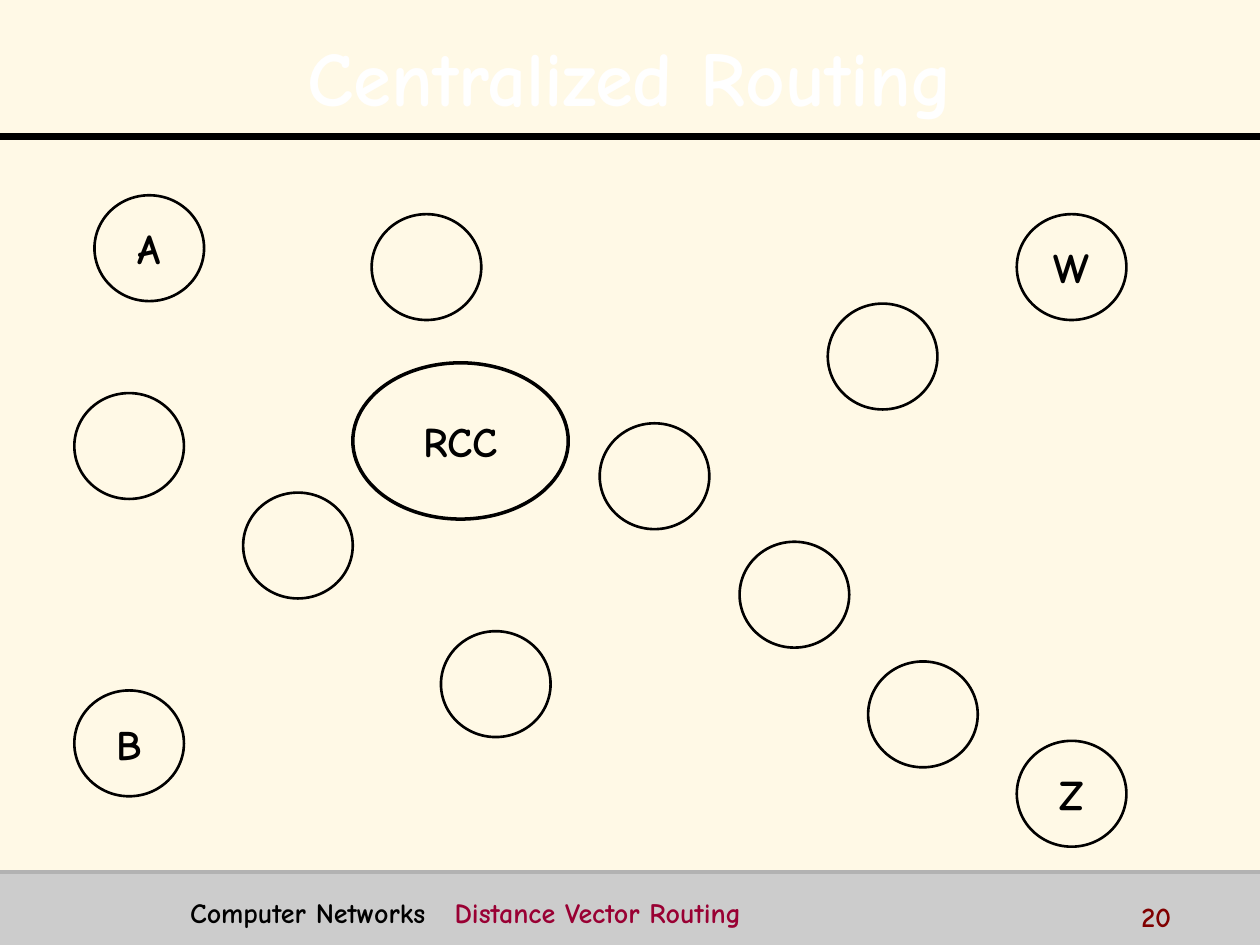
from dataclasses import dataclass

from lxml.etree import SubElement
from pptx import Presentation
from pptx.dml.color import RGBColor
from pptx.enum.shapes import MSO_CONNECTOR as Connector, MSO_SHAPE as Shape
from pptx.enum.text import MSO_ANCHOR as Anchor, PP_ALIGN as Align
from pptx.oxml import parse_xml
from pptx.oxml.ns import nsdecls, qn
from pptx.util import Inches, Pt

TITLE_SHADOW = (
    f'<a:effectLst {nsdecls("a")}><a:outerShdw dist="25400" dir="2700000">'
    '<a:srgbClr val="000000"/></a:outerShdw></a:effectLst>'
)
NODE_SIZE = (0.87, 0.84)
NODES = [
    ("A", 0.75, 1.55), ("Z", 8.07, 5.88), ("W", 8.07, 1.7), ("B", 0.59, 5.48),
    ("", 6.89, 5.25), ("", 5.87, 4.3), ("", 6.57, 2.41), ("", 4.76, 3.36),
    ("", 1.93, 3.91), ("", 2.95, 1.7), ("", 0.59, 3.12), ("", 3.5, 5.01),
]


@dataclass(frozen=True)
class Theme:
    """Colours, font and type sizes of the slide."""

    font: str = "Comic Neue"
    background: str = "FFF9E6"
    ink: str = "000000"
    title: str = "FFFFFF"
    footer_band: str = "CCCCCC"
    footer_rule: str = "B2B2B2"
    topic: str = "990033"
    number: str = "800000"
    title_size: int = 44
    node_size: int = 24
    footer_size: int = 16


class SlideBuilder:
    """Draws styled elements on the current slide."""

    def __init__(self, slide, theme):
        """Keep the slide and theme and paint the background."""
        self.slide = slide
        self.theme = theme
        fill = slide.background.fill
        fill.solid()
        fill.fore_color.rgb = RGBColor.from_string(theme.background)

    def run(self, paragraph, text, size, color):
        """Add a bold run in the theme font."""
        run = paragraph.add_run()
        run.text = text
        style = {"name": self.theme.font, "size": Pt(size), "bold": True}
        for name, value in style.items():
            setattr(run.font, name, value)
        run.font.color.rgb = RGBColor.from_string(color)
        return run

    def title(self, text, box):
        """Place the title with its hard shadow."""
        title = self.slide.shapes.title
        for name, value in zip(("left", "top", "width", "height"), box):
            setattr(title, name, Inches(value))
        title.text_frame.vertical_anchor = Anchor.MIDDLE
        paragraph = title.text_frame.paragraphs[0]
        for name, value in {"alignment": Align.CENTER, "line_spacing": 1.1}.items():
            setattr(paragraph, name, value)
        run = self.run(paragraph, text, self.theme.title_size, self.theme.title)
        properties = run.font._element
        properties.find(qn("a:solidFill")).addnext(parse_xml(TITLE_SHADOW))

    def band(self, box, color):
        """Draw a filled rectangle without outline."""
        shape = self.slide.shapes.add_shape(Shape.RECTANGLE, *map(Inches, box))
        shape.shadow.inherit = False
        shape.fill.solid()
        shape.fill.fore_color.rgb = RGBColor.from_string(color)
        shape.line.fill.background()

    def rule(self, top, color, weight):
        """Draw a horizontal line across the slide."""
        line = self.slide.shapes.add_connector(
            Connector.STRAIGHT, 0, Inches(top), Inches(10), Inches(top)
        )
        line.line.color.rgb = RGBColor.from_string(color)
        line.line.width = Pt(weight)
        SubElement(line._element.spPr, qn("a:effectLst"))

    def node(self, text, box, weight=1.5):
        """Draw an outlined ellipse with an optional label."""
        shape = self.slide.shapes.add_shape(Shape.OVAL, *map(Inches, box))
        shape.shadow.inherit = False
        shape.fill.background()
        shape.line.color.rgb = RGBColor.from_string(self.theme.ink)
        shape.line.width = Pt(weight)
        if text:
            frame = shape.text_frame
            for name, value in {"word_wrap": False, "vertical_anchor": Anchor.MIDDLE}.items():
                setattr(frame, name, value)
            paragraph = frame.paragraphs[0]
            paragraph.alignment = Align.CENTER
            self.run(paragraph, text, self.theme.node_size, self.theme.ink)

    def footer(self, box, parts, tab=None):
        """Add a line of coloured footer text with an optional tab stop."""
        frame = self.slide.shapes.add_textbox(*map(Inches, box)).text_frame
        frame.word_wrap = True
        paragraph = frame.paragraphs[0]
        if tab:
            stops = SubElement(paragraph._p.get_or_add_pPr(), qn("a:tabLst"))
            SubElement(stops, qn("a:tab"), pos=str(Inches(tab)), algn="l")
        for text, color in parts:
            self.run(paragraph, text, self.theme.footer_size, color)


def main():
    """Build and save the slide."""
    presentation = Presentation()
    presentation.slide_width, presentation.slide_height = Inches(10), Inches(7.5)
    theme = Theme()
    slide = presentation.slides.add_slide(presentation.slide_layouts[5])
    builder = SlideBuilder(slide, theme)

    builder.band((0, 6.92, 10, 0.58), theme.footer_band)
    builder.rule(1.08, theme.ink, 4)
    builder.rule(6.92, theme.footer_rule, 2)
    builder.title("Centralized Routing", (0.2, 0.13, 9.61, 0.87))
    footer_parts = [
        ("Computer Networks\t", theme.ink),
        ("Distance Vector Routing", theme.topic),
    ]
    builder.footer((1.41, 7.06, 7.28, 0.31), footer_parts, tab=2.1)
    builder.footer((8.96, 7.09, 1, 0.25), [("20", theme.number)])

    builder.node("RCC", (2.8, 2.88, 1.71, 1.24), weight=2)
    for label, left, top in NODES:
        builder.node(label, (left, top, *NODE_SIZE))

    presentation.save("out.pptx")


if __name__ == "__main__":
    main()
